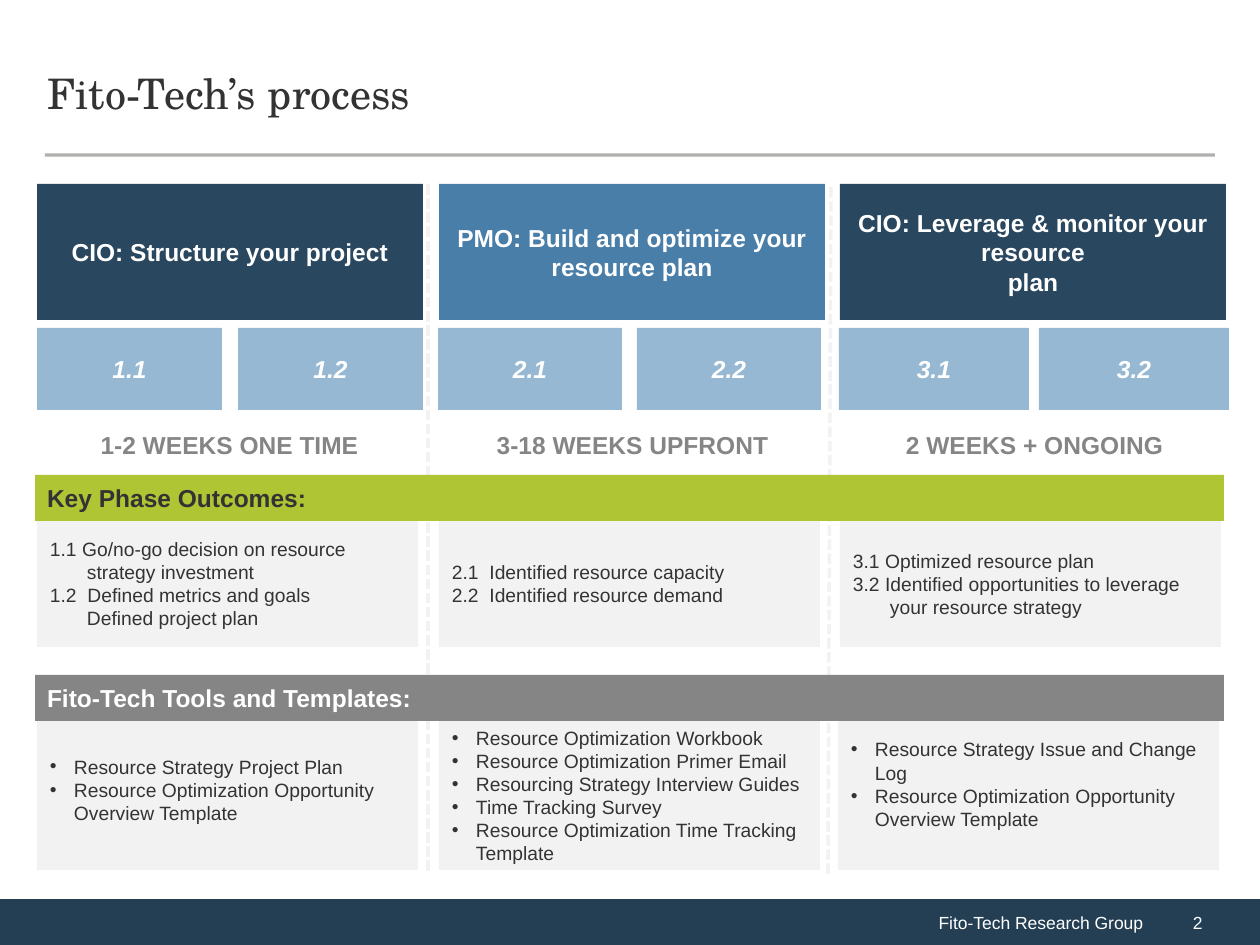
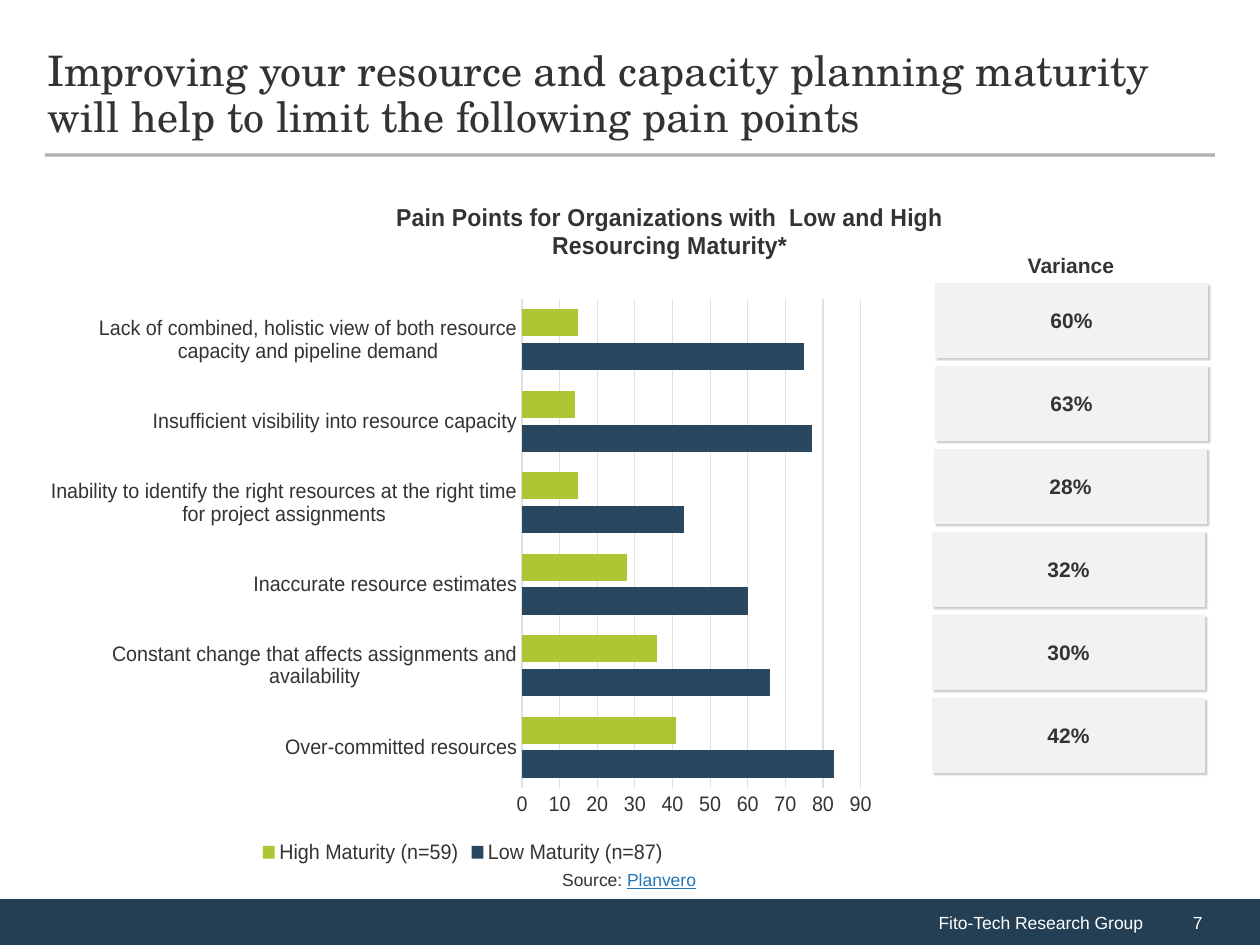
from lxml.etree import SubElement as Sub
from pptx import Presentation
from pptx.chart.data import CategoryChartData as Data
from pptx.dml.color import RGBColor as Rgb
from pptx.enum.chart import XL_CHART_TYPE as Kind, XL_LEGEND_POSITION as Pos, XL_TICK_MARK as Tick
from pptx.enum.dml import MSO_LINE as Dash
from pptx.enum.shapes import MSO_CONNECTOR as Conn, MSO_SHAPE as Form
from pptx.enum.text import MSO_ANCHOR as Anchor, MSO_AUTO_SIZE as Auto, PP_ALIGN as Align
from pptx.oxml.ns import qn
from pptx.util import Pt

PX = 914400 / 126
HUE = {k: Rgb.from_string(v) for k, v in {
    "text": "333333", "white": "FFFFFF", "foot": "243F54", "navy": "29475F",
    "blue": "497EA9", "sky": "96B8D2", "lime": "B0C534", "grey": "858585",
    "pale": "F2F2F2", "grid": "E0E0E0", "rule": "45433E", "link": "2576B7"}.items()}
SANS = {"name": "Arial", "size": Pt(11)}
HEAD = {"name": "Arial", "size": Pt(14), "bold": True}
STEP = HEAD | {"italic": True}
NOTE = {"name": "Arial", "size": Pt(12), "bold": True}
SMALL = {"name": "Arial", "size": Pt(10)}
SERIF = {"name": "TeX Gyre Schola", "size": Pt(24)}
MARGIN = (13, 6, 13, 6)


def px(*nums):
    return [round(n * PX) for n in nums]


def box(slide, rect, lines, look, fill=None, hue="text", align=Align.LEFT,
        ins=MARGIN, hang=0, left=0, bullet=False):
    """Add a filled rectangle, or a plain text box when there is no fill."""
    if fill:
        shape = slide.shapes.add_shape(Form.RECTANGLE, *px(*rect))
        shape.shadow.inherit = False
        shape.fill.solid()
        shape.fill.fore_color.rgb = HUE[fill]
        shape.line.fill.background()
    else:
        shape = slide.shapes.add_textbox(*px(*rect))
    frame = shape.text_frame
    frame.word_wrap = True
    frame.vertical_anchor = Anchor.MIDDLE if fill else Anchor.TOP
    for side, gap in zip(("left", "top", "right", "bottom"), px(*ins)):
        setattr(frame, f"margin_{side}", gap)
    frame.text = "\n".join(lines)
    for para in frame.paragraphs:
        para.alignment = align
        for key, val in look.items():
            setattr(para.runs[0].font, key, val)
        para.runs[0].font.color.rgb = HUE[hue]
        prop = para._p.get_or_add_pPr()
        prop.set("marL", str(px(left or hang)[0]))
        prop.set("indent", str(-px(hang)[0]))
        if bullet:
            Sub(prop, qn("a:buFont"), typeface="Arial")
            Sub(prop, qn("a:buChar"), char="•")
    return shape


deck = Presentation()
deck.slide_width, deck.slide_height = px(1260, 945)

# Shared frame: title, rule and footer
slides = []
for title, page in (
        ("Fito-Tech’s process", "2"),
        ("Improving your resource and capacity planning maturity will help to "
         "limit the following pain points", "7")):
    slide = deck.slides.add_slide(deck.slide_layouts[5])
    slides.append(slide)
    head = slide.shapes.title
    head.left, head.top, head.width, head.height = px(35, 36, 1188, 118)
    frame = head.text_frame
    frame.text = title
    frame.auto_size = Auto.NONE
    frame.vertical_anchor = Anchor.MIDDLE
    para = frame.paragraphs[0]
    para.alignment = Align.LEFT
    para.line_spacing = Pt(26)
    for key, val in SERIF.items():
        setattr(para.runs[0].font, key, val)
    para.runs[0].font.color.rgb = HUE["text"]
    rule = slide.shapes.add_connector(Conn.STRAIGHT, *px(45, 155, 1215, 155))
    rule.line.width = Pt(1.75)
    rule.line.color.rgb = HUE["rule"]
    tint = rule.line._ln.find(".//" + qn("a:srgbClr"))
    Sub(tint, qn("a:alpha"), val="42000")
    Sub(rule._element.spPr, qn("a:effectLst"))
    box(slide, (0, 899, 1155, 46), ["Fito-Tech Research Group"], SMALL, "foot", "white",
        Align.RIGHT, ins=(13, 6, 12, 6))
    box(slide, (1155, 899, 105, 46), [page], SMALL, "foot", "white", left=25)

# Process slide: three phases
flow, pains = slides
for ends in ((428, 871, 428, 184), (828, 874, 831, 185)):
    split = flow.shapes.add_connector(Conn.STRAIGHT, *px(*ends))
    split.line.width = Pt(2)
    split.line.color.rgb = HUE["pale"]
    split.line.dash_style = Dash.SQUARE_DOT
    Sub(split._element.spPr, qn("a:effectLst"))

phases = [
    (37, "navy", ["CIO: Structure your project"], (37, 238), 185, "1-2 WEEKS ONE TIME",
     ["1.1 Go/no-go decision on resource strategy investment",
      "1.2  Defined metrics and goals", "Defined project plan"],
     (37, 709, 161, 6),
     ["Resource Strategy Project Plan",
      "Resource Optimization Opportunity Overview Template"]),
    (439, "blue", ["PMO: Build and optimize your resource plan"], (438, 637), 184,
     "3-18 WEEKS UPFRONT",
     ["2.1  Identified resource capacity", "2.2  Identified resource demand"],
     (439, 721, 149, 6),
     ["Resource Optimization Workbook", "Resource Optimization Primer Email",
      "Resourcing Strategy Interview Guides", "Time Tracking Survey",
      "Resource Optimization Time Tracking Template"]),
    (840, "navy", ["CIO: Leverage & monitor your resource", "plan"], (839, 1039), 190,
     "2 WEEKS + ONGOING",
     ["3.1 Optimized resource plan",
      "3.2 Identified opportunities to leverage your resource strategy"],
     (838, 721, 149, 29),
     ["Resource Strategy Issue and Change Log",
      "Resource Optimization Opportunity Overview Template"])]
for num, (x, fill, name, steps, wide, time, goals, spot, tools) in enumerate(phases, 1):
    box(flow, (x, 184, 386, 136), name, HEAD, fill, "white", Align.CENTER, (13, 10, 13, 10))
    for sub, left in enumerate(steps, 1):
        box(flow, (left, 328, wide, 82), [f"{num}.{sub}"], STEP, "sky", "white",
            Align.CENTER, (0, 0, 0, 0))
    box(flow, (x + num, 424, 383, 43), [time], HEAD, hue="grey", align=Align.CENTER)
    aims = box(flow, (x, 520, 381, 127), goals, SANS, "pale", hang=37)
    for para in aims.text_frame.paragraphs:
        if not para.text[0].isdigit():
            para._p.pPr.set("indent", "0")
    left, top, tall, low = spot
    box(flow, (left, top, 381, tall), tools, SANS, "pale", ins=(13, 6, 13, low),
        hang=24, bullet=True)
for y, label, fill, hue in ((475, "Key Phase Outcomes:", "lime", "text"),
                            (675, "Fito-Tech Tools and Templates:", "grey", "white")):
    box(flow, (35, y, 1189, 46), [label], HEAD, fill, hue, ins=(0, 0, 0, 0), left=12)

# Pain point slide: bar chart
data = Data()
data.categories = [
    "Over-committed resources",
    "Constant change that affects assignments and availability",
    "Inaccurate resource estimates",
    "Inability to identify the right resources at the right time for project assignments",
    "Insufficient visibility into resource capacity",
    "Lack of combined, holistic view of both resource capacity and pipeline demand"]
data.add_series("Low Maturity (n=87)", (83, 66, 60, 43, 77, 75))
data.add_series("High Maturity (n=59)", (41, 36, 28, 15, 14, 15))
wide, tall = 912, 675
chart = pains.shapes.add_chart(Kind.BAR_CLUSTERED, *px(35, 195, wide, tall), data).chart
chart.font.name, chart.font.size = "Arial", Pt(12)
chart.font.color.rgb = HUE["text"]
chart.has_title = chart.has_legend = True
chart.legend.position = Pos.BOTTOM
chart.legend.include_in_layout = False
chart.chart_title.text_frame.text = (
    "Pain Points for Organizations with  Low and High\nResourcing Maturity*")
for para in chart.chart_title.text_frame.paragraphs:
    for key, val in HEAD.items():
        setattr(para.runs[0].font, key, val)
    para.runs[0].font.color.rgb = HUE["text"]
plot = chart.plots[0]
plot.gap_width, plot.overlap, plot.vary_by_categories = 75, -25, False
for bars, hue in zip(plot.series, ("navy", "lime")):
    bars.format.fill.solid()
    bars.format.fill.fore_color.rgb = HUE[hue]
cats, vals = chart.category_axis, chart.value_axis
for axis in (cats, vals):
    axis.major_tick_mark = axis.minor_tick_mark = Tick.NONE
cats.format.line.color.rgb = HUE["grid"]
cats.format.line.width = Pt(0.75)
vals.minimum_scale, vals.maximum_scale, vals.major_unit = 0, 90, 10
vals.format.line.fill.background()
vals.major_gridlines.format.line.color.rgb = HUE["grid"]
vals.major_gridlines.format.line.width = Pt(0.75)

# Chart parts at fixed px within the chart area
for tag, spot, area in (("title", 1, {"x": 381, "y": 3}),
                        ("plotArea", 0, {"x": 519, "y": 104, "w": 361, "h": 489}),
                        ("legend", 1, {"x": 236, "y": 650})):
    part = chart._chartSpace.find(".//" + qn(f"c:{tag}"))
    for old in part.findall(qn("c:layout")):
        part.remove(old)
    lay = part.makeelement(qn("c:layout"))
    part.insert(spot, lay)
    man = Sub(lay, qn("c:manualLayout"))
    if tag == "plotArea":
        Sub(man, qn("c:layoutTarget"), val="inner")
    for key in "xy":
        Sub(man, qn(f"c:{key}Mode"), val="edge")
    for key, val in area.items():
        Sub(man, qn(f"c:{key}"), val=str(val / (wide if key in "xw" else tall)))

# Variance column and source
box(pains, (908, 247, 326, 78), ["Variance"], NOTE, align=Align.CENTER)
gaps = zip((935, 935, 934, 932, 932, 932), (60, 63, 28, 32, 30, 42))
for row, (x, gap) in enumerate(gaps):
    cell = box(pains, (x, 283 + 83 * row, 273, 75), [f"{gap}%"], NOTE, "pale",
               align=Align.CENTER)
    glow = Sub(cell._element.spPr.find(qn("a:effectLst")), qn("a:outerShdw"),
               blurRad="12700", dist="19050", dir="2700000", algn="tl", rotWithShape="0")
    Sub(Sub(glow, qn("a:srgbClr"), val="000000"), qn("a:alpha"), val="20000")
cite = box(pains, (545, 863, 168, 34), ["Source: "], SMALL, align=Align.CENTER)
cite.text_frame.word_wrap = False
link = cite.text_frame.paragraphs[0].add_run()
link.text = "Planvero"
for key, val in (SMALL | {"underline": True}).items():
    setattr(link.font, key, val)
link.font.color.rgb = HUE["link"]

deck.save("out.pptx")
